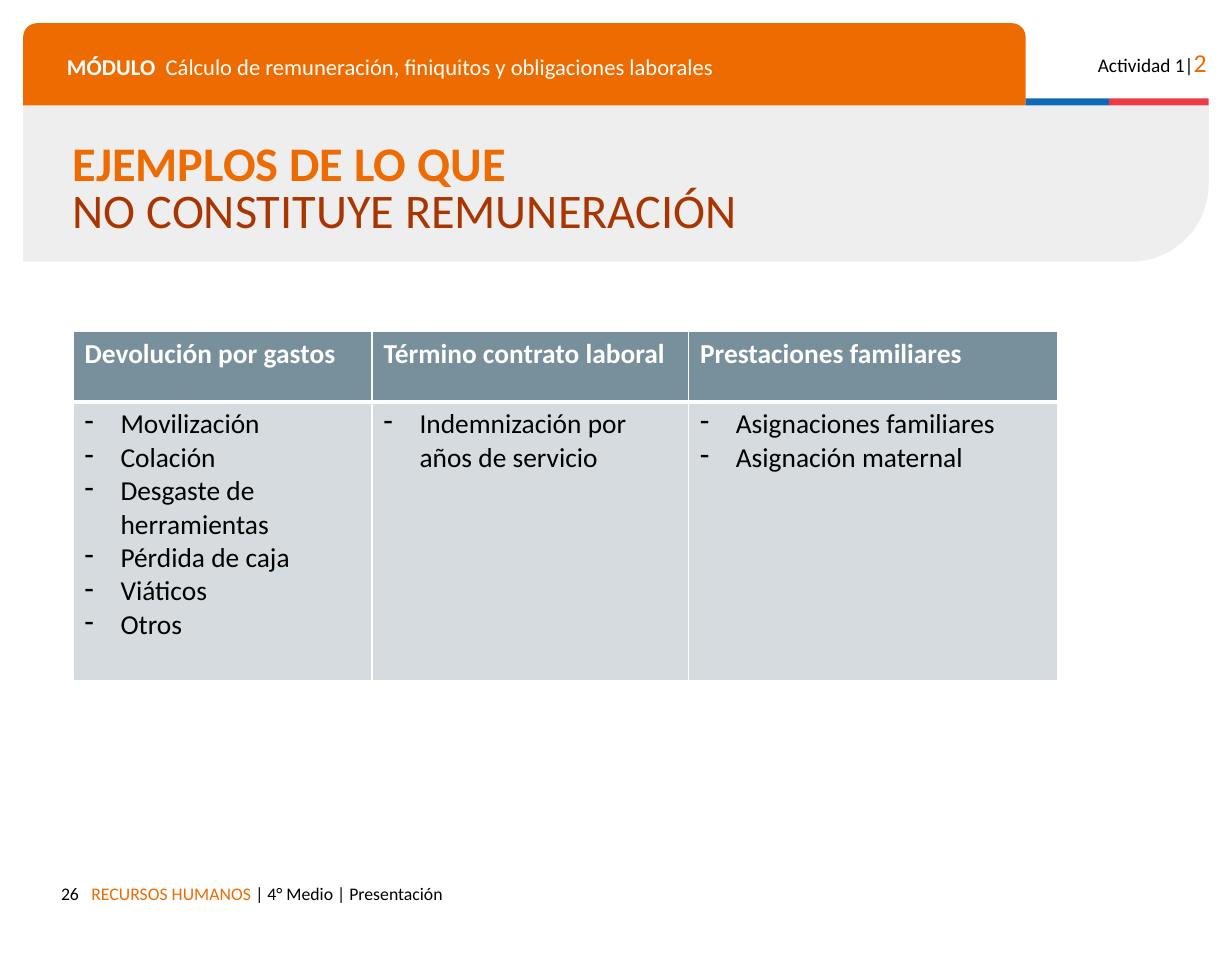
import pptx
import pptx.dml.color
import pptx.enum.shapes
import pptx.enum.text
import pptx.oxml.ns
import pptx.util
from lxml import etree

Inches = pptx.util.Inches
Pt = pptx.util.Pt
qn = pptx.oxml.ns.qn
KINDS = pptx.enum.shapes.MSO_SHAPE
ALIGN = pptx.enum.text.PP_ALIGN
ANCHOR = pptx.enum.text.MSO_ANCHOR

COLORS = {
    "orange": "ED6B00", "rust": "A93501", "blue": "0F69B4", "red": "EB3C46",
    "panel": "EEEEEE", "head": "78909C", "body": "D5DBDE",
    "white": "FFFFFF", "black": "000000",
}
WIDTHS = [2.58, 2.73, 3.19]
HEIGHTS = [0.61, 2.41]
GROUPS = {
    "Devolución por gastos": [
        "Movilización", "Colación", "Desgaste de herramientas",
        "Pérdida de caja", "Viáticos", "Otros"],
    "Término contrato laboral": ["Indemnización por años de servicio"],
    "Prestaciones familiares": ["Asignaciones familiares", "Asignación maternal"],
}


def tint(name):
    return pptx.dml.color.RGBColor.from_string(COLORS[name])


def add_run(para, text, size, color, bold=False):
    run = para.add_run()
    run.text = text
    run.font.name = "Calibri"
    run.font.size = Pt(size)
    run.font.bold = bold
    run.font.color.rgb = tint(color)


def add_block(slide, kind, box, color, *rounds):
    """Add a filled shape without outline; rounds are its corner adjustments."""
    shape = slide.shapes.add_shape(kind, *map(Inches, box))
    shape.shadow.inherit = False
    shape.fill.solid()
    shape.fill.fore_color.rgb = tint(color)
    shape.line.fill.background()
    for i, value in enumerate(rounds):
        shape.adjustments[i] = value
    return shape


def add_text(slide, box, runs, align=ALIGN.LEFT, pad=0.1, space=None):
    """Add a one-paragraph text box; a run of None is a line break."""
    frame = slide.shapes.add_textbox(*map(Inches, box)).text_frame
    frame.word_wrap = True
    frame.margin_top = frame.margin_bottom = Inches(pad)
    para = frame.paragraphs[0]
    para.alignment = align
    para.line_spacing = space
    for run in runs:
        if run is None:
            para.add_line_break()
        else:
            add_run(para, *run)
    return frame


def add_dash(para):
    props = para._p.get_or_add_pPr()
    props.set("marL", str(Inches(0.31)))
    props.set("indent", str(-Inches(0.31)))
    color = etree.SubElement(props, qn("a:buClr"))
    etree.SubElement(color, qn("a:srgbClr"), val=COLORS["black"])
    etree.SubElement(props, qn("a:buChar"), char="-")


def set_edges(cell, **widths):
    """Draw white borders, 1 pt wide unless a side is given its own width."""
    props = cell._tc.get_or_add_tcPr()
    for i, side in enumerate("LRTB"):
        line = etree.Element(qn("a:ln" + side), w=str(Pt(widths.get(side, 1))))
        fill = etree.SubElement(line, qn("a:solidFill"))
        etree.SubElement(fill, qn("a:srgbClr"), val=COLORS["white"])
        props.insert(i, line)


def fill_cell(cell, color):
    cell.fill.solid()
    cell.fill.fore_color.rgb = tint(color)


def add_grid(slide):
    box = (0.63, 2.86, sum(WIDTHS), sum(HEIGHTS))
    table = slide.shapes.add_table(2, len(GROUPS), *map(Inches, box)).table
    for row, height in zip(table.rows, HEIGHTS):
        row.height = Inches(height)
    for i, (title, items) in enumerate(GROUPS.items()):
        table.columns[i].width = Inches(WIDTHS[i])
        head, body = table.cell(0, i), table.cell(1, i)
        fill_cell(head, "head")
        set_edges(head, B=3)
        add_run(head.text_frame.paragraphs[0], title, 17, "white", True)
        fill_cell(body, "body")
        set_edges(body, T=3)
        frame = body.text_frame
        for j, item in enumerate(items):
            para = frame.add_paragraph() if j else frame.paragraphs[0]
            add_dash(para)
            add_run(para, item, 17, "black")


def add_frame(slide):
    """Add the bands, the header text and the footer."""
    panel = add_block(slide, KINDS.ROUND_1_RECTANGLE,
                      (0.2, 0.91, 10.23, 1.35), "panel", 0.5)
    panel._element.spPr.find(qn("a:xfrm")).set("flipV", "1")
    add_block(slide, KINDS.ROUND_2_SAME_RECTANGLE,
              (0.2, 0.2, 8.65, 0.71), "orange", 0.167, 0)
    add_block(slide, KINDS.RECTANGLE, (8.85, 0.85, 0.72, 0.06), "blue")
    add_block(slide, KINDS.RECTANGLE, (9.57, 0.85, 0.86, 0.06), "red")
    add_text(slide, (9.23, 0.3, 1.28, 0.38),
             [("Actividad 1|", 12, "black"), ("2", 16, "orange")], ALIGN.RIGHT)
    add_text(slide, (0.48, 0.38, 8.14, 0.35),
             [("MÓDULO  ", 14, "white", True),
              ("Cálculo de remuneración, finiquitos y obligaciones laborales",
               14, "white")], space=0.9)
    add_text(slide, (0.69, 7.53, 7.14, 0.38),
             [("RECURSOS HUMANOS ", 11, "orange"),
              ("| 4° Medio | Presentación", 11, "black")])
    add_text(slide, (0.2, 7.53, 0.58, 0.29), [("26", 11, "black")], ALIGN.RIGHT)


def main():
    deck = pptx.Presentation()
    deck.slide_width = Inches(10.63)
    deck.slide_height = Inches(8.27)
    slide = deck.slides.add_slide(deck.slide_layouts[6])
    add_frame(slide)
    title = add_text(slide, (0.53, 1.29, 9.9, 0.72),
                     [("EJEMPLOS DE LO QUE", 30, "orange", True), None,
                      ("NO CONSTITUYE REMUNERACIÓN", 30, "rust")],
                     pad=0.05, space=0.8)
    title.vertical_anchor = ANCHOR.MIDDLE
    add_grid(slide)
    deck.save("out.pptx")


if __name__ == "__main__":
    main()
